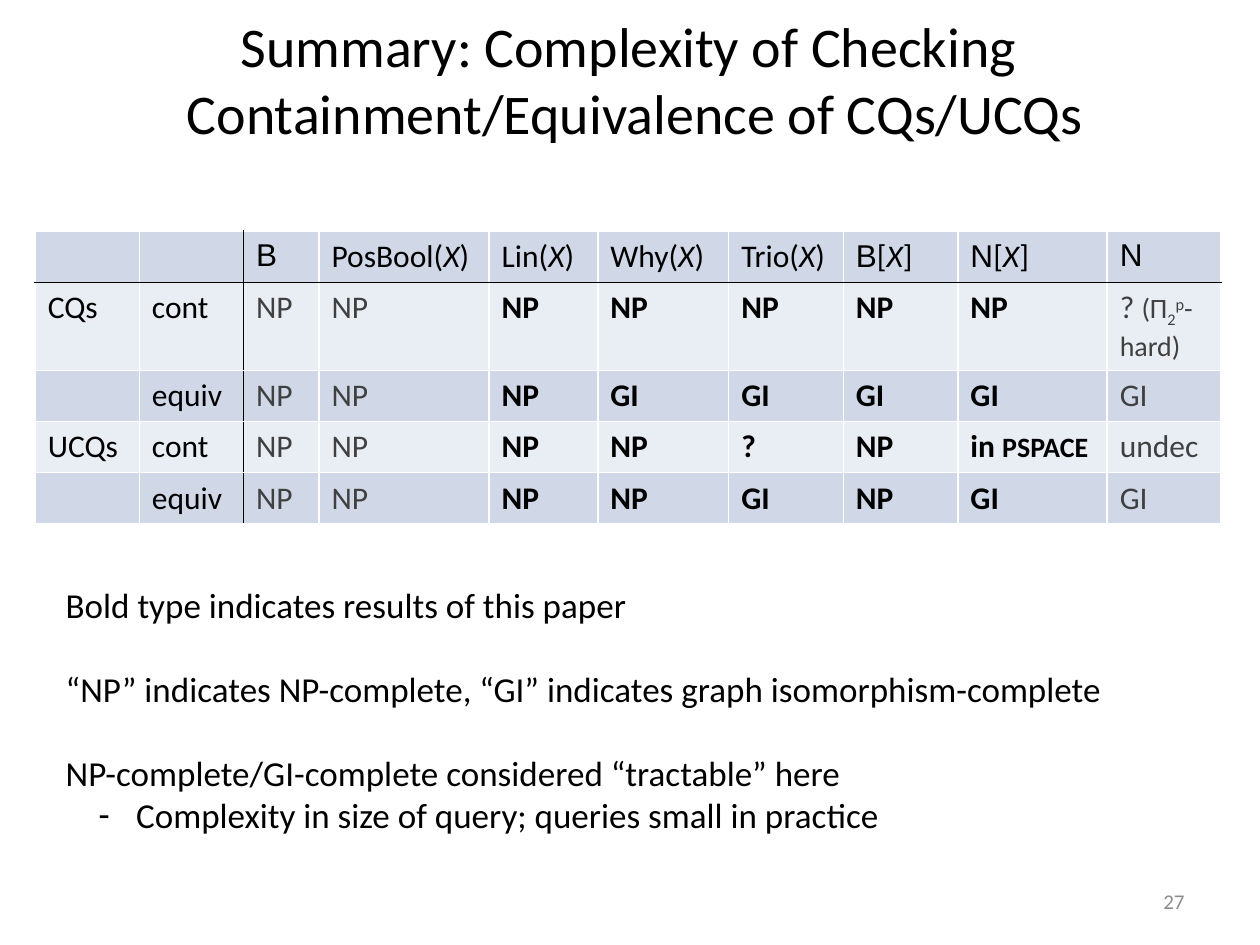
from lxml import etree
from pptx import Presentation
from pptx.dml.color import RGBColor
from pptx.enum.text import MSO_ANCHOR, MSO_AUTO_SIZE, PP_ALIGN
from pptx.oxml.ns import qn
from pptx.util import Cm, Pt

CENTER, RIGHT = PP_ALIGN.CENTER, PP_ALIGN.RIGHT
MIDDLE, TOP = MSO_ANCHOR.MIDDLE, MSO_ANCHOR.TOP

BLACK = RGBColor(0x00, 0x00, 0x00)
WHITE = RGBColor(0xFF, 0xFF, 0xFF)
DARK_GREY = RGBColor(0x40, 0x40, 0x40)
PAGE_GREY = RGBColor(0x8C, 0x8C, 0x8C)
BAND_DARK = RGBColor(0xD0, 0xD8, 0xE8)
BAND_LIGHT = RGBColor(0xE9, 0xED, 0xF4)

TITLE_LINES = ["Summary: Complexity of Checking ",
               "Containment/Equivalence of CQs/UCQs"]
PAGE_NUMBER = "27"


def semiring(name, brackets="()", font="Calibri"):
    """Spans for a semiring over the italic variable X."""
    return [(name, {"font": font}), (brackets[0], {}),
            ("X", {"italic": True}), (brackets[1], {})]


# A cell is a plain string or a list of (text, format) spans.
HEADER = ["", "", [("B", {"font": "Arial"})],
          semiring("PosBool"), semiring("Lin"), semiring("Why"), semiring("Trio"),
          semiring("B", "[]", "Arial"), semiring("N", "[]", "Arial"),
          [("N", {"font": "Arial"})]]
PI_HARD = [("? ", {}), ("(Π", {"size": 16}), ("2", {"size": 16, "baseline": -25}),
           ("p", {"size": 16, "baseline": 30}), ("- hard)", {"size": 16})]
IN_PSPACE = [("in ", {}), ("PSPACE", {"size": 16})]
ROWS = [
    HEADER,
    ["CQs", "cont", "NP", "NP", "NP", "NP", "NP", "NP", "NP", PI_HARD],
    ["", "equiv", "NP", "NP", "NP", "GI", "GI", "GI", "GI", "GI"],
    ["UCQs", "cont", "NP", "NP", "NP", "NP", "?", "NP", IN_PSPACE, "undec"],
    ["", "equiv", "NP", "NP", "NP", "NP", "GI", "NP", "GI", "GI"],
]
COLUMN_WIDTHS = [2.1, 2.1, 1.52, 3.43, 2.19, 2.64, 2.31, 2.31, 3.01, 2.29]
ROW_HEIGHT = 1.03
LABEL_COLUMNS = 2
NEW_RESULT_COLUMNS = range(4, 9)

# Text, space before in points, whether it is a dash item
NOTES = [
    ("Bold type indicates results of this paper", 0, False),
    ("“NP” indicates NP-complete, “GI” indicates graph isomorphism-complete", 24, False),
    ("NP-complete/GI-complete considered “tractable” here", 24, False),
    ("Complexity in size of query; queries small in practice", 0, True),
]


def add_span(para, text, size=18, font="Calibri", color=BLACK,
             bold=False, italic=False, baseline=0):
    span = para.add_run()
    span.text = text
    span.font.size, span.font.name = Pt(size), font
    span.font.bold, span.font.italic = bold, italic
    span.font.color.rgb = color
    if baseline:
        span.font._element.set("baseline", str(baseline * 1000))


def place(box, left, top, width, height, anchor):
    box.left, box.top, box.width, box.height = map(Cm, (left, top, width, height))
    frame = box.text_frame
    frame.word_wrap, frame.auto_size = True, MSO_AUTO_SIZE.NONE
    frame.vertical_anchor = anchor
    return frame


def set_bullet(para, char=None, margin=0, hanging=0):
    props = para._p.get_or_add_pPr()
    props.set("marL", str(Cm(margin)))
    props.set("indent", str(-Cm(hanging)))
    if char:
        etree.SubElement(props, qn("a:buFont"), typeface="Arial")
        etree.SubElement(props, qn("a:buChar"), char=char)
    else:
        etree.SubElement(props, qn("a:buNone"))


def set_borders(cell, black_sides):
    props = cell._tc.get_or_add_tcPr()
    for side in "LRTB":
        color, width = (BLACK, 0.75) if side in black_sides else (WHITE, 1)
        line = etree.SubElement(props, qn("a:ln" + side), w=str(Pt(width)))
        fill = etree.SubElement(line, qn("a:solidFill"))
        etree.SubElement(fill, qn("a:srgbClr"), val=str(color))


def black_sides_at(row, column):
    """Sides on the rule below the header or the rule right of the labels."""
    sides = {0: "B", 1: "T"}.get(row, "")
    return sides + {LABEL_COLUMNS - 1: "R", LABEL_COLUMNS: "L"}.get(column, "")


def add_title(page):
    para = place(page.shapes.title, 0.84, 0, 23.93, 3.18, MIDDLE).paragraphs[0]
    para.alignment = CENTER
    for number, line in enumerate(TITLE_LINES):
        if number:
            para.add_line_break()
        add_span(para, line, size=32)


def add_complexity_table(page):
    table = page.shapes.add_table(
        len(ROWS), len(COLUMN_WIDTHS), Cm(0.71), Cm(4.66),
        Cm(sum(COLUMN_WIDTHS)), Cm(ROW_HEIGHT * len(ROWS))).table
    for column, width in zip(table.columns, COLUMN_WIDTHS):
        column.width = Cm(width)
    for r, row in enumerate(ROWS):
        for c, content in enumerate(row):
            cell = table.cell(r, c)
            set_borders(cell, black_sides_at(r, c))
            cell.fill.solid()
            cell.fill.fore_color.rgb = BAND_LIGHT if r % 2 else BAND_DARK
            is_result = r > 0 and c >= LABEL_COLUMNS
            is_new = is_result and c in NEW_RESULT_COLUMNS
            color = DARK_GREY if is_result and not is_new else BLACK
            spans = [(content, {})] if isinstance(content, str) else content
            for text, style in spans:
                if text:
                    add_span(cell.text_frame.paragraphs[0], text,
                             color=color, bold=is_new, **style)


def add_notes(page):
    frame = place(page.placeholders[1], 1.07, 11.63, 23.06, 5.38, TOP)
    for number, (text, space, is_item) in enumerate(NOTES):
        para = frame.add_paragraph() if number else frame.paragraphs[0]
        para.space_before = Pt(space)
        if is_item:
            para.level = 1
            set_bullet(para, "-", margin=1.42, hanging=0.76)
        else:
            set_bullet(para)
        add_span(para, text, size=20)


def add_page_number(page):
    box = page.shapes.add_textbox(0, 0, 0, 0)
    para = place(box, 18.2, 17.65, 5.93, 1.02, MIDDLE).paragraphs[0]
    para.alignment = RIGHT
    add_span(para, PAGE_NUMBER, size=12, color=PAGE_GREY)


def main():
    deck = Presentation()
    deck.slide_width, deck.slide_height = Cm(25.4), Cm(19.05)
    page = deck.slides.add_slide(deck.slide_layouts[1])
    add_title(page)
    add_complexity_table(page)
    add_page_number(page)
    add_notes(page)
    deck.save("out.pptx")


if __name__ == "__main__":
    main()
